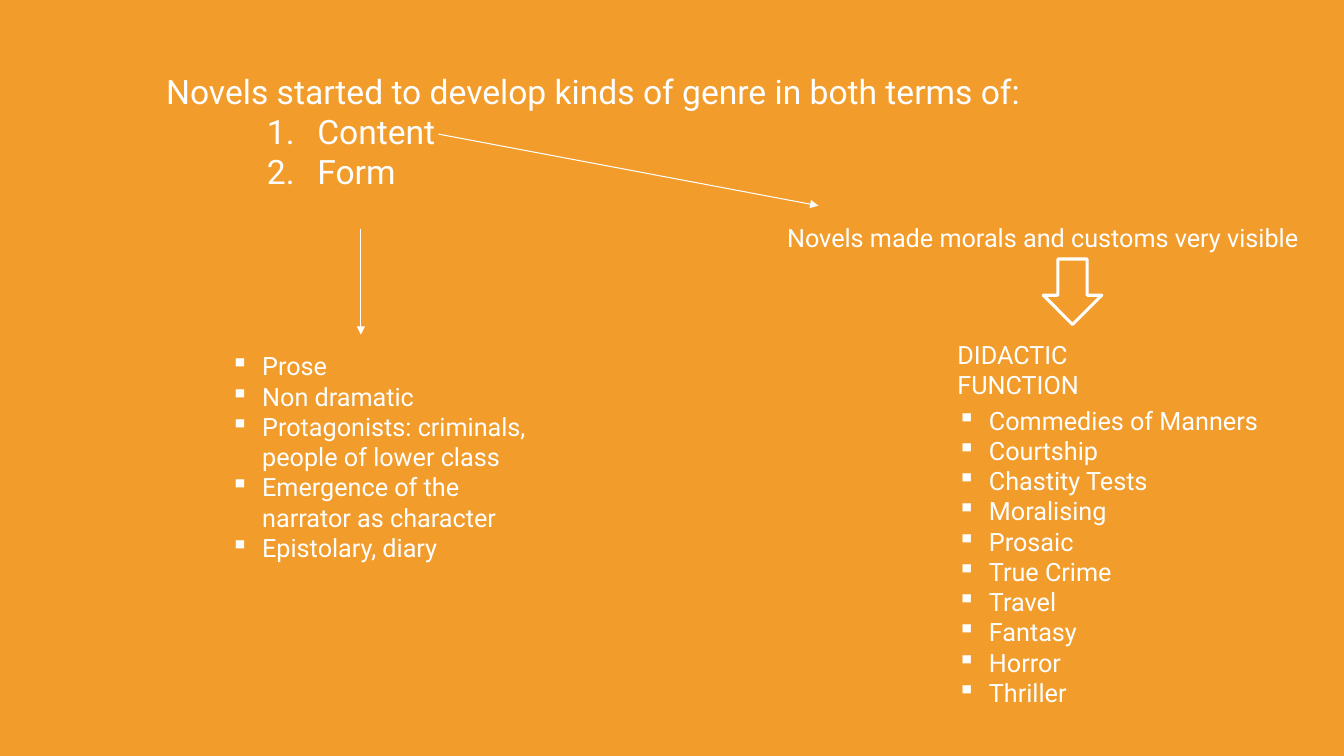
from lxml.etree import SubElement
from pptx import Presentation
from pptx.dml.color import RGBColor
from pptx.enum.shapes import MSO_CONNECTOR, MSO_SHAPE
from pptx.enum.text import MSO_AUTO_SIZE
from pptx.oxml.ns import qn
from pptx.util import Pt

ORANGE = RGBColor(0xF1, 0x9C, 0x2B)
WHITE = RGBColor(0xFF, 0xFF, 0xFF)

SQUARE = {"tag": "a:buChar", "attrs": {"char": "▪"},
          "left": 22.5, "hang": 22.5, "level": 0}
NUMBER = {"tag": "a:buAutoNum", "attrs": {"type": "arabicPeriod"},
          "left": 108, "hang": 36, "level": 2}

FORMS = ["Prose", "Non dramatic",
         "Protagonists: criminals, people of lower class",
         "Emergence of the narrator as character", "Epistolary, diary"]
GENRES = ["Commedies of Manners", "Courtship", "Chastity Tests", "Moralising",
          "Prosaic", "True Crime", "Travel", "Fantasy", "Horror", "Thriller"]


class Board:
    def __init__(self, slide):
        self.slide = slide
        self.font = {"name": "Roboto", "size": Pt(18)}
        self.frame = {"word_wrap": True,
                      "auto_size": MSO_AUTO_SIZE.SHAPE_TO_FIT_TEXT}
        fill = slide.background.fill
        fill.solid()
        fill.fore_color.rgb = ORANGE

    def apply(self, target, values):
        for name, value in values.items():
            setattr(target, name, value)

    def mark(self, para, bullet):
        para.level = bullet["level"]
        props = para._p.get_or_add_pPr()
        props.set("marL", str(Pt(bullet["left"])))
        props.set("indent", str(-Pt(bullet["hang"])))
        SubElement(props, qn(bullet["tag"]), bullet["attrs"])

    def text(self, place, lines, size=18):
        box = self.slide.shapes.add_textbox(*map(Pt, place))
        frame = box.text_frame
        self.apply(frame, self.frame)
        for index, (words, bullet) in enumerate(lines):
            para = frame.add_paragraph() if index else frame.paragraphs[0]
            if bullet:
                self.mark(para, bullet)
            run = para.add_run()
            run.text = words
            self.apply(run.font, self.font | {"size": Pt(size)})
            run.font.color.rgb = WHITE

    def items(self, place, words):
        self.text(place, [(word, SQUARE) for word in words])

    def stroke(self, line, width):
        line.color.rgb = WHITE
        line.width = Pt(width)

    def arrow(self, *ends):
        link = self.slide.shapes.add_connector(
            MSO_CONNECTOR.STRAIGHT, *map(Pt, ends))
        self.stroke(link.line, 0.75)
        SubElement(link.line._get_or_add_ln(), qn("a:tailEnd"),
                   {"type": "triangle"})
        SubElement(link._element.spPr, qn("a:effectLst"))

    def block(self, place):
        shape = self.slide.shapes.add_shape(
            MSO_SHAPE.DOWN_ARROW, *map(Pt, place))
        shape.shadow.inherit = False
        shape.fill.background()
        self.stroke(shape.line, 2.25)


def main():
    deck = Presentation()
    deck.slide_width, deck.slide_height = Pt(960), Pt(540)
    board = Board(deck.slides.add_slide(deck.slide_layouts[6]))

    board.text((111.6, 46.8, 633.6, 116.6), [
        ("Novels started to develop kinds of genre in both terms of:", None),
        ("Content", NUMBER),
        ("Form", NUMBER)], 24)
    board.arrow(313.2, 95.8, 584.6, 146.9)
    board.text((555.1, 155.5, 404.6, 29),
               [("Novels made morals and customs very visible", None)])
    board.block((745.2, 185, 41.8, 46.8))
    board.text((676.8, 239, 178.6, 29), [("DIDACTIC FUNCTION", None)])
    board.items((676.8, 285.8, 231.1, 225.4), GENRES)
    board.arrow(257.8, 163.4, 257.8, 239)
    board.items((157.7, 247, 239, 181.4), FORMS)

    deck.save("out.pptx")


if __name__ == "__main__":
    main()
